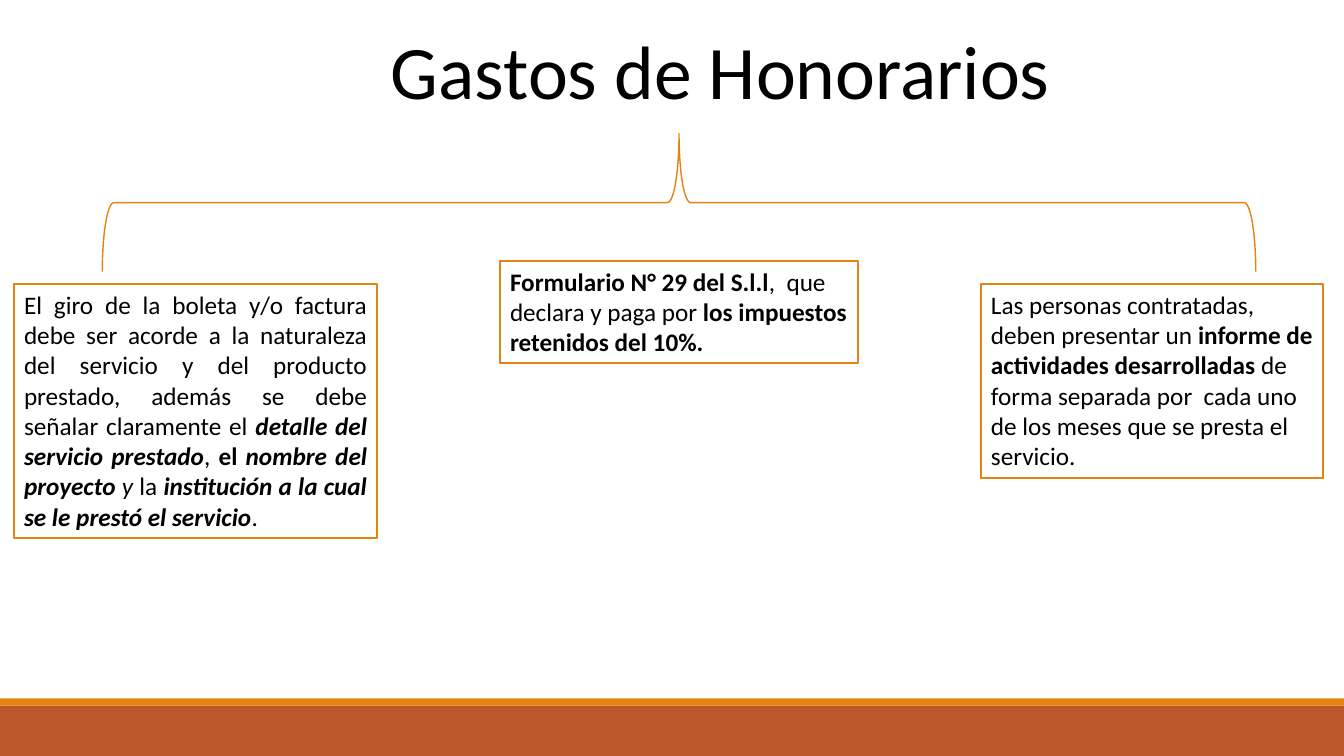
from dataclasses import dataclass

from pptx import Presentation
from pptx.dml.color import RGBColor
from pptx.enum import shapes, text
from pptx.util import Inches, Pt


@dataclass(frozen=True)
class Theme:
    font: str = "Calibri"
    ink: RGBColor = RGBColor(0, 0, 0)
    paper: RGBColor = RGBColor(255, 255, 255)
    orange: RGBColor = RGBColor(0xE4, 0x83, 0x12)
    rust: RGBColor = RGBColor(0xBD, 0x58, 0x2C)
    head: int = 54
    body: int = 18


@dataclass(frozen=True)
class Run:
    words: str
    bold: bool = False
    slant: bool = False


@dataclass(frozen=True)
class Area:
    left: float
    top: float
    width: float
    height: float

    def lengths(self) -> tuple:
        return tuple(map(Inches, (self.left, self.top, self.width, self.height)))


@dataclass(frozen=True)
class Note:
    area: Area
    align: text.PP_ALIGN
    runs: tuple[Run, ...]


@dataclass(frozen=True)
class Band:
    area: Area
    color: RGBColor


THEME = Theme()
KIND = shapes.MSO_SHAPE
ALIGN = text.PP_ALIGN

BANDS = (
    Band(Area(0, 7, 13.33, 0.5), THEME.rust),
    Band(Area(0, 6.93, 13.33, 0.07), THEME.orange),
)

NOTES = (
    Note(Area(0.14, 2.82, 3.6, 2.52), ALIGN.JUSTIFY, (
        Run("El giro de la boleta y/o factura debe ser acorde a la naturaleza del "
            "servicio y del producto prestado, además se debe señalar claramente el "),
        Run("detalle del servicio prestado", True, True),
        Run(", "),
        Run("el ", True),
        Run("nombre del proyecto", True, True),
        Run(" y ", slant=True),
        Run("la "),
        Run("institución a la cual se le prestó el servicio", True, True),
        Run("."),
    )),
    Note(Area(4.96, 2.59, 3.55, 1.01), ALIGN.LEFT, (
        Run("Formulario N° 29 del S.l.l", True),
        Run(",  que declara y paga por "),
        Run("los impuestos retenidos del 10%.", True),
    )),
    Note(Area(9.73, 2.82, 3.39, 1.92), ALIGN.LEFT, (
        Run("Las personas contratadas, deben presentar un "),
        Run("informe de actividades desarrolladas ", True),
        Run("de forma separada por  cada uno de los meses que se presta el servicio."),
    )),
)


def write(frame, runs: tuple[Run, ...], size: int, align: text.PP_ALIGN) -> None:
    line = frame.paragraphs[0]
    line.alignment = align
    for item in runs:
        run = line.add_run()
        run.text = item.words
        font = run.font
        font.name, font.size = THEME.font, Pt(size)
        font.bold, font.italic = item.bold, item.slant
        font.color.rgb = THEME.ink


def draw_title(slide, area: Area, words: str) -> None:
    title = slide.shapes.title
    title.left, title.top, title.width, title.height = area.lengths()
    frame = title.text_frame
    frame.word_wrap = False
    frame.auto_size = text.MSO_AUTO_SIZE.SHAPE_TO_FIT_TEXT
    frame.vertical_anchor = text.MSO_ANCHOR.TOP
    write(frame, (Run(words),), THEME.head, ALIGN.CENTER)


def draw_band(slide, band: Band) -> None:
    bar = slide.shapes.add_shape(KIND.RECTANGLE, *band.area.lengths())
    bar.shadow.inherit = False
    bar.fill.solid()
    bar.fill.fore_color.rgb = band.color
    bar.line.fill.background()


def draw_note(slide, note: Note) -> None:
    box = slide.shapes.add_shape(KIND.RECTANGLE, *note.area.lengths())
    box.shadow.inherit = False
    box.fill.solid()
    box.fill.fore_color.rgb = THEME.paper
    box.line.color.rgb = THEME.orange
    box.line.width = Pt(1.25)
    frame = box.text_frame
    frame.word_wrap = True
    frame.auto_size = text.MSO_AUTO_SIZE.SHAPE_TO_FIT_TEXT
    frame.vertical_anchor = text.MSO_ANCHOR.TOP
    write(frame, note.runs, THEME.body, note.align)


def draw_brace(slide, area: Area) -> None:
    """Draw a brace turned to point up, its area given before turning."""
    brace = slide.shapes.add_shape(KIND.RIGHT_BRACE, *area.lengths())
    brace.rotation = 270
    brace.shadow.inherit = False
    brace.fill.background()
    brace.line.color.rgb = THEME.orange
    brace.line.width = Pt(1)


def main() -> None:
    deck = Presentation()
    deck.slide_width, deck.slide_height = Inches(13.33), Inches(7.5)
    slide = deck.slides.add_slide(deck.slide_layouts.get_by_name("Title Only"))
    slide.background.fill.solid()
    slide.background.fill.fore_color.rgb = THEME.paper
    for band in BANDS:
        draw_band(slide, band)
    draw_title(slide, Area(3.74, 0.19, 6.81, 1.01), "Gastos de Honorarios")
    for note in NOTES:
        draw_note(slide, note)
    draw_brace(slide, Area(6.05, -3.71, 1.37, 11.44))
    deck.save("out.pptx")


if __name__ == "__main__":
    main()
